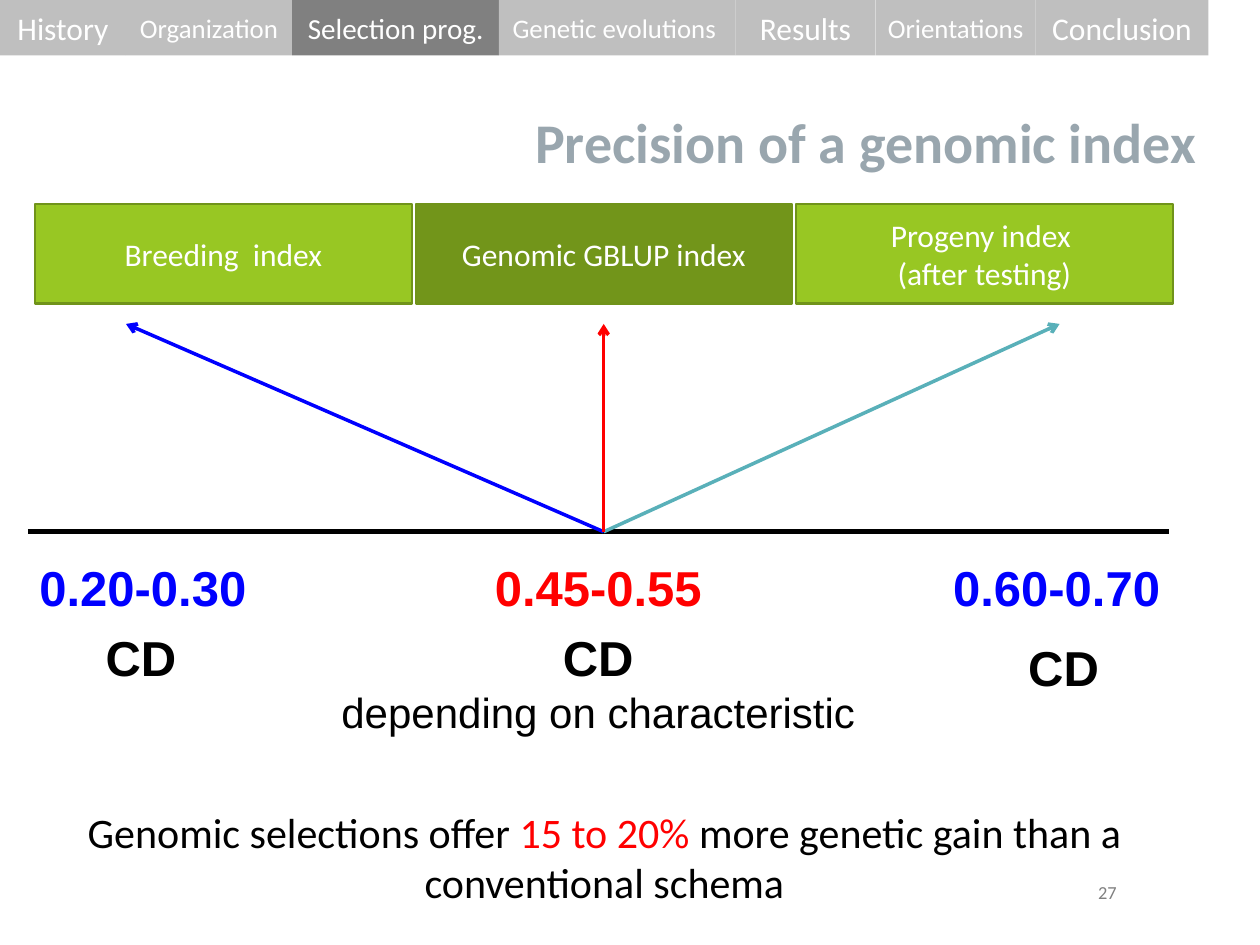
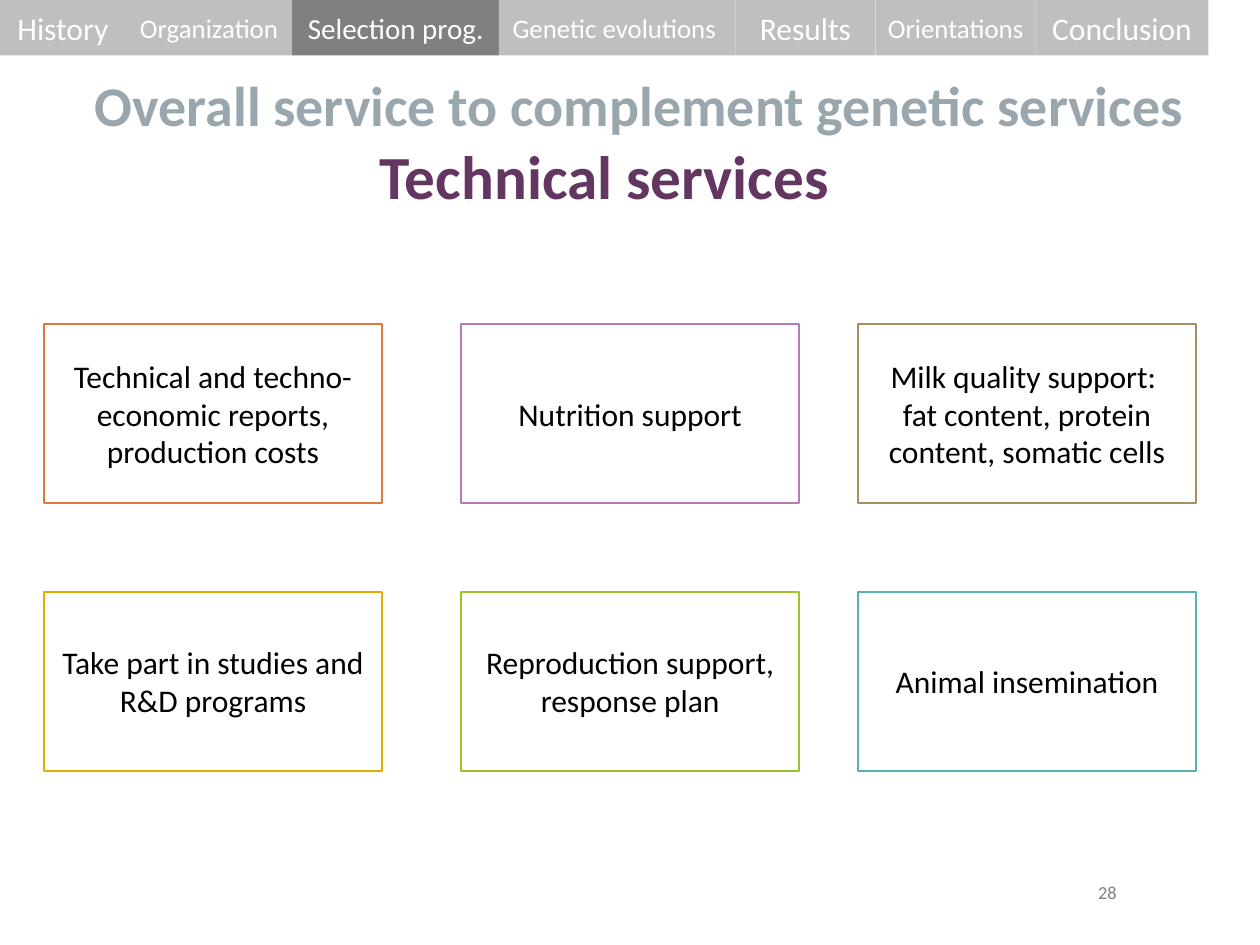
from itertools import accumulate, pairwise, product

from pptx import Presentation
from pptx.dml.color import RGBColor
from pptx.enum.shapes import MSO_CONNECTOR, MSO_SHAPE
from pptx.enum.text import MSO_ANCHOR, MSO_AUTO_SIZE, PP_ALIGN
from pptx.oxml.ns import qn
from pptx.util import Cm, Pt
from lxml.etree import SubElement

WHITE, BLACK, RED, BLUE, TEAL = "FFFFFF", "000000", "FF0000", "0000FF", "59B0B9"
GREEN, DARK_GREEN, GREEN_LINE = "98C723", "72951A", "70931A"
TAB, ACTIVE_TAB, PAGE_GREY = "BFBFBF", "808080", "808080"
TITLE_FONT = {"name": "Calibri", "size": 32, "bold": True, "color": "99A6AE"}
BODY_FONT = {"name": "Calibri", "size": 18, "color": BLACK}
FIGURE_FONT = {"name": "Arial", "size": 28, "bold": True, "color": BLACK}

# label, width in cm, text size
TABS = [
    ("History", 2.54, 18),
    ("Organization", 3.35, 15.3),
    ("Selection prog.", 4.17, 16.6),
    ("Genetic evolutions ", 4.77, 15.3),
    ("Results", 2.82, 18),
    ("Orientations", 3.23, 15.3),
    ("Conclusion", 3.48, 18),
]


def rgb(value):
    return RGBColor.from_string(value)


def cm_box(*lengths):
    return [Cm(n) for n in lengths]


def set_font(font, style):
    for key, value in style.items():
        if key == "color":
            font.color.rgb = rgb(value)
        else:
            setattr(font, key, Pt(value) if key == "size" else value)


def write(tf, paragraphs, style, align=PP_ALIGN.CENTER, anchor=MSO_ANCHOR.MIDDLE, inset=None):
    """Fill a frame; a paragraph is a string or a list of (text, style changes)."""
    frame_format = {"word_wrap": True, "auto_size": MSO_AUTO_SIZE.NONE, "vertical_anchor": anchor}
    if inset is not None:
        frame_format |= {f"margin_{side}": Cm(inset) for side in ("left", "top", "right", "bottom")}
    for key, value in frame_format.items():
        setattr(tf, key, value)
    for i, runs in enumerate(paragraphs):
        p = tf.add_paragraph() if i else tf.paragraphs[0]
        p.alignment = align
        for text, changes in [(runs, {})] if isinstance(runs, str) else runs:
            r = p.add_run()
            r.text = text
            set_font(r.font, style | changes)


def add_text(s, box, paragraphs, style, **options):
    tb = s.shapes.add_textbox(*cm_box(*box))
    write(tb.text_frame, paragraphs, style, **options)


def add_box(s, box, paragraphs, style, fill, line=None, **options):
    sp = s.shapes.add_shape(MSO_SHAPE.RECTANGLE, *cm_box(*box))
    sp.shadow.inherit = False
    sp.fill.solid()
    sp.fill.fore_color.rgb = rgb(fill)
    if line:
        sp.line.color.rgb = rgb(line)
        sp.line.width = Pt(1.25)
    else:
        sp.line.fill.background()
    write(sp.text_frame, paragraphs, style, **options)


def add_line(s, start, end, color, width, arrow=False):
    cxn = s.shapes.add_connector(MSO_CONNECTOR.STRAIGHT, *cm_box(*start, *end))
    cxn.line.color.rgb = rgb(color)
    cxn.line.width = Pt(width)
    if arrow:
        SubElement(cxn.line._get_or_add_ln(), qn("a:tailEnd"), type="arrow")
    SubElement(cxn._element.spPr, qn("a:effectLst"))


def add_tabs(s, active, height=1.12):
    edges = accumulate((width for _, width, _ in TABS), initial=0)
    for (label, _, size), (left, right) in zip(TABS, pairwise(edges)):
        add_box(s, (left, 0, right - left, height), [label],
                BODY_FONT | {"size": size, "color": WHITE},
                ACTIVE_TAB if label == active else TAB, inset=0)


def start_slide(prs, title, page, subtitle=None):
    """Add a slide with its title, navigation tabs and page number."""
    s = prs.slides.add_slide(prs.slide_layouts[5])
    sp = s.shapes.title
    sp.left, sp.top, sp.width, sp.height = cm_box(0, 1.12, 24.38, 3.45)
    write(sp.text_frame, [title], TITLE_FONT, align=PP_ALIGN.RIGHT)
    if subtitle:
        p = sp.text_frame.add_paragraph()
        p.alignment = PP_ALIGN.CENTER
        r = p.add_run()
        r.text = subtitle
        set_font(r.font, TITLE_FONT | {"size": 35, "color": "633661"})
    add_tabs(s, "Selection prog.")
    add_text(s, (21.59, 17.78, 1.47, 0.43), [page],
             BODY_FONT | {"size": 10.5, "color": PAGE_GREY}, inset=0)
    return s


def add_index_boxes(s, left, top, width, height, gap=0.08):
    indexes = [
        (["Breeding  index"], GREEN),
        (["Genomic GBLUP index"], DARK_GREEN),
        (["Progeny index ", "(after testing)"], GREEN),
    ]
    for i, (label, fill) in enumerate(indexes):
        add_box(s, (left + i * (width + gap), top, width, height), label,
                BODY_FONT | {"color": WHITE}, fill, GREEN_LINE)


def add_precision_axis(s, left, top, width, height):
    """Draw arrows that fan out from a base line at the bottom of the box."""
    base = top + height
    origin = (left + 11.61, base)
    add_line(s, (left, base), (left + width, base), BLACK, 3)
    for offset, color in [(1.98, BLUE), (20.8, TEAL), (11.61, RED)]:
        add_line(s, origin, (left + offset, top), color, 2, arrow=True)


def add_precision_values(s, top):
    # range, colour, centre of range, centre and drop of the CD label, its note
    values = [
        ("0.20-0.30", BLUE, 2.88, 2.84, 1.4, []),
        ("0.45-0.55", RED, 12.06, 12.06, 1.4, ["depending on characteristic"]),
        ("0.60-0.70", BLUE, 21.3, 21.44, 1.6, []),
    ]
    for cd_range, color, centre, cd_centre, drop, notes in values:
        add_text(s, (centre - 2.5, top, 5, 1.45), [cd_range],
                 FIGURE_FONT | {"color": color}, anchor=MSO_ANCHOR.TOP)
        note_style = {"size": 24, "bold": False}
        width = 12 if notes else 3
        add_text(s, (cd_centre - width / 2, top + drop, width, 2.49 if notes else 1.45),
                 ["CD", *([(note, note_style)] for note in notes)],
                 FIGURE_FONT, anchor=MSO_ANCHOR.TOP)


def add_service_cards(s, left, top, width, height):
    cards = [
        (["Technical and techno-economic reports, production costs"], "E0773C"),
        (["Nutrition support"], "B77BB4"),
        (["Milk quality support: ", "fat content, protein content, somatic cells"], "A98D63"),
        (["Take part in studies and R&D programs"], "DEAE00"),
        (["Reproduction support, response plan"], GREEN),
        (["Animal insemination"], TEAL),
    ]
    offsets = product((0, 5.4), (0, 8.41, 16.41))
    for (text, line), (dy, dx) in zip(cards, offsets):
        add_box(s, (left + dx, top + dy, width, height), text, BODY_FONT, WHITE, line)


def precision_slide(prs):
    s = start_slide(prs, "Precision of a genomic index", "27")
    add_index_boxes(s, 0.71, 4.11, 7.59, 2.01)
    add_precision_axis(s, 0.56, 6.53, 23.01, 4.19)
    add_precision_values(s, 11.12)
    conclusion = [
        ("Genomic selections offer ", {}),
        ("15 to 20% ", {"color": RED}),
        ("more genetic gain than a conventional schema", {}),
    ]
    add_text(s, (0.03, 16.13, 24.31, 2.31), [conclusion], BODY_FONT | {"size": 24},
             anchor=MSO_ANCHOR.TOP)


def services_slide(prs):
    s = start_slide(prs, "Overall service to complement genetic services ", "28",
                    "Technical services")
    add_service_cards(s, 0.89, 6.53, 6.81, 3.61)


def main():
    prs = Presentation()
    prs.slide_width, prs.slide_height = Cm(25.4), Cm(19.05)
    precision_slide(prs)
    services_slide(prs)
    prs.save("out.pptx")


if __name__ == "__main__":
    main()
